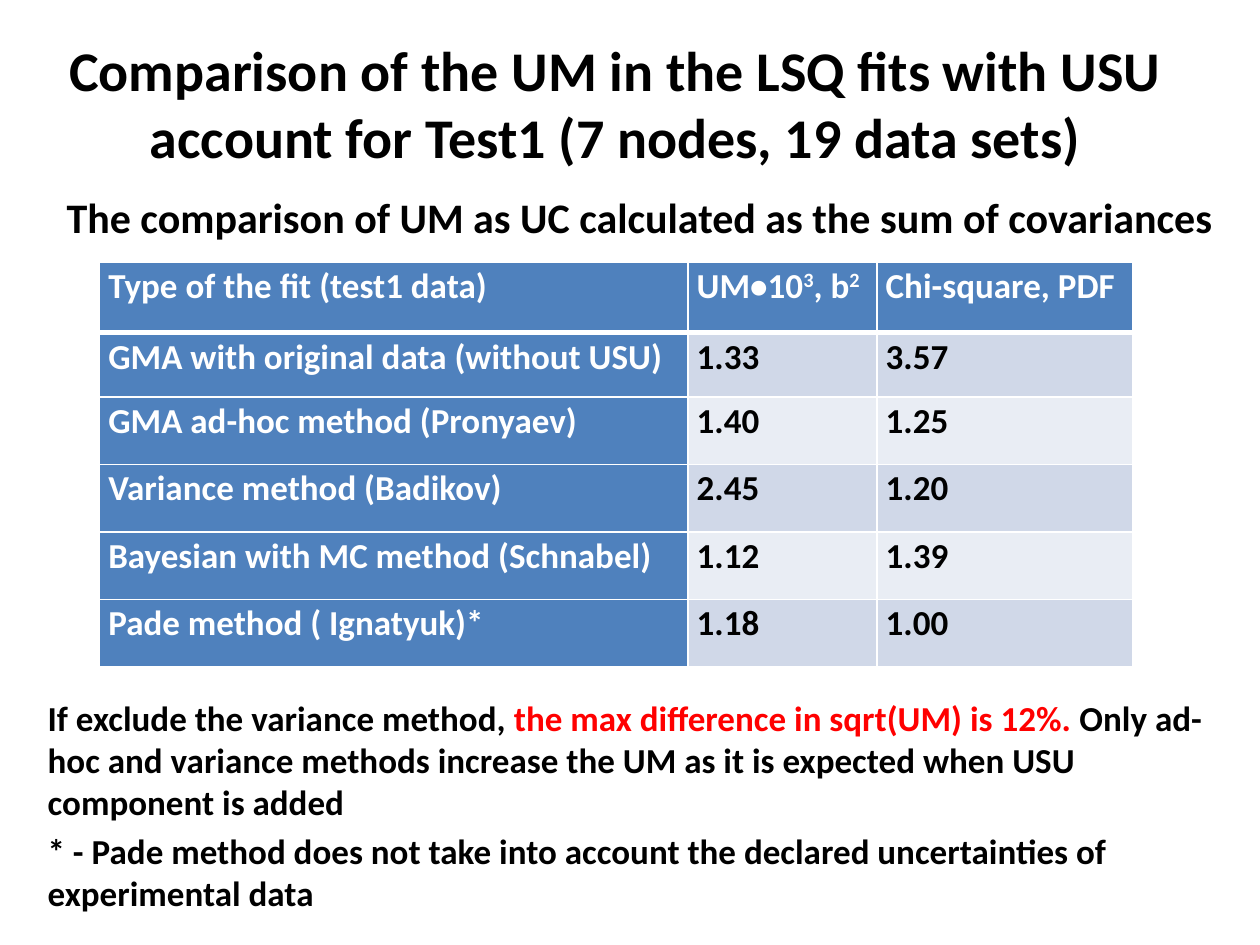
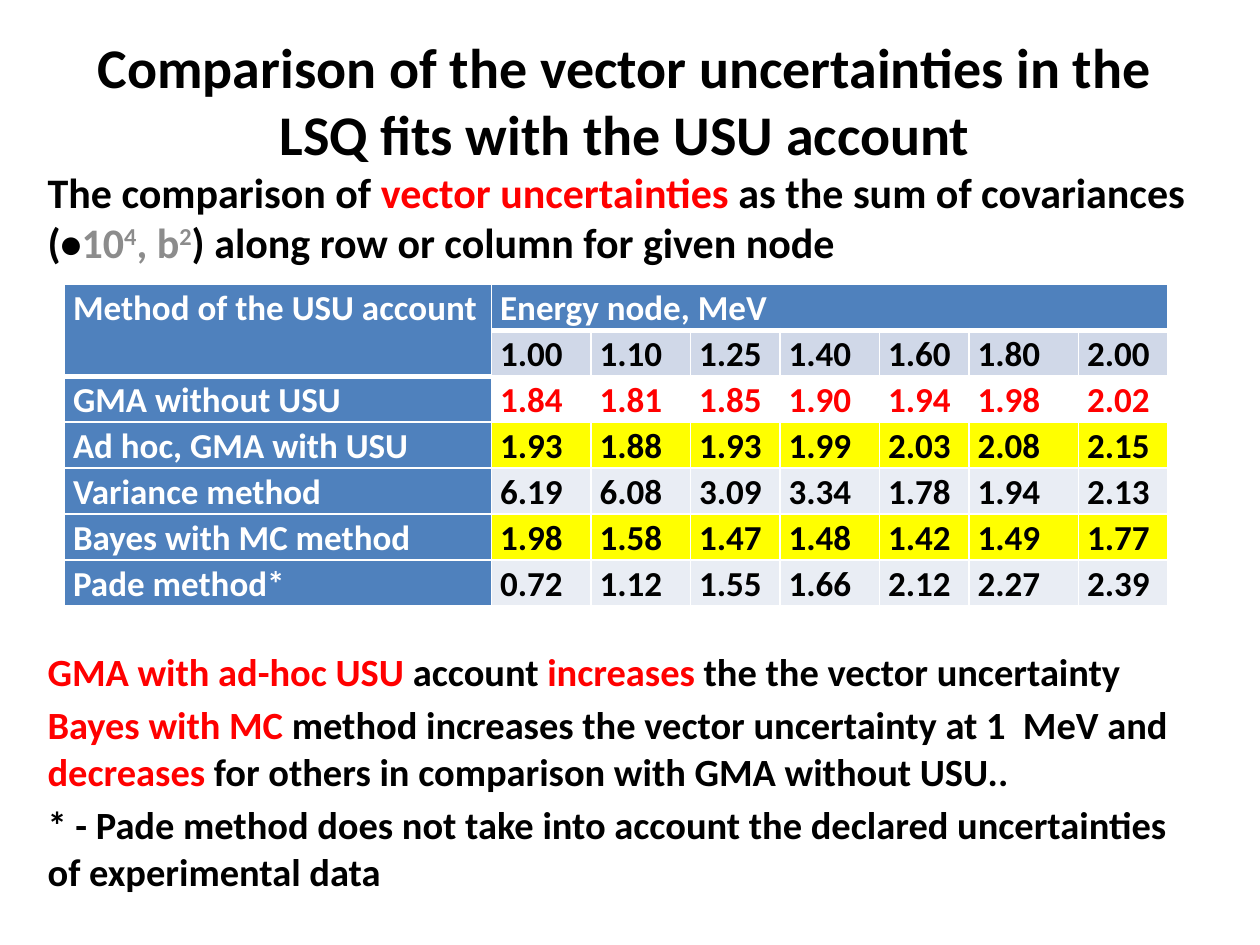
from pptx import Presentation
from pptx.dml.color import RGBColor
from pptx.enum.text import MSO_ANCHOR, MSO_AUTO_SIZE, PP_ALIGN
from pptx.oxml import parse_xml
from pptx.oxml.ns import nsdecls
from pptx.util import Inches, Pt

WIDTH, HEIGHT = 10, 7.5
FONT = "Calibri"
BLACK, WHITE, RED, GREY = "000000", "FFFFFF", "FF0000", "8C8C8C"
BLUE, BAND_DARK, BAND_LIGHT, YELLOW = "4F81BD", "D0D8E8", "E9EDF4", "FFFF00"
TITLE_SIZE, SUBTITLE_SIZE, TABLE_SIZE = 32, 24, 20
SUPERSCRIPT = "30000"
PADE_NOTE = ("* - Pade method does not take into account "
             "the declared uncertainties of experimental data")


def color(hex_string):
    return RGBColor.from_string(hex_string)


def across(percent):
    return Inches(WIDTH * percent / 100)


def down(percent):
    return Inches(HEIGHT * percent / 100)


def box(left, top, width, height):
    return across(left), down(top), across(width), down(height)


def fill_paragraph(paragraph, content, size, base_color=BLACK):
    paragraph.font.name = FONT
    paragraph.font.size = Pt(size)
    paragraph.font.bold = True
    paragraph.font.color.rgb = color(base_color)
    pieces = [content] if isinstance(content, str) else content
    for piece in pieces:
        text, run_color, baseline = piece if isinstance(piece, tuple) else (piece, base_color, None)
        run = paragraph.add_run()
        run.text = text
        run.font.color.rgb = color(run_color)
        if baseline:
            run._r.get_or_add_rPr().set("baseline", baseline)


def red(text):
    return text, RED, None


def raised(text, run_color):
    return text, run_color, SUPERSCRIPT


def fill_frame(frame, paragraphs, size, alignment=PP_ALIGN.LEFT):
    frame.word_wrap = True
    frame.auto_size = MSO_AUTO_SIZE.NONE
    frame.vertical_anchor = MSO_ANCHOR.TOP
    for index, content in enumerate(paragraphs):
        paragraph = frame.add_paragraph() if index else frame.paragraphs[0]
        paragraph.alignment = alignment
        paragraph.space_before = Pt(0.2 * size)
        fill_paragraph(paragraph, content, size)


def add_titled_slide(presentation, title_text, position):
    slide = presentation.slides.add_slide(presentation.slide_layouts[5])
    title = slide.shapes.title
    title.left, title.top, title.width, title.height = position
    fill_frame(title.text_frame, [title_text], TITLE_SIZE, PP_ALIGN.CENTER)
    return slide


def add_text(slide, paragraphs, position, size):
    fill_frame(slide.shapes.add_textbox(*position).text_frame, paragraphs, size)


def set_borders(cell, top, bottom):
    properties = cell._tc.get_or_add_tcPr()
    for side, points in (("L", 1), ("R", 1), ("T", top), ("B", bottom)):
        properties.append(parse_xml(
            f'<a:ln{side} {nsdecls("a")} w="{Pt(points)}"><a:solidFill>'
            f'<a:srgbClr val="{WHITE}"/></a:solidFill></a:ln{side}>'))


def format_cell(cell, content, fill, text_color, top, bottom):
    set_borders(cell, top, bottom)
    cell.fill.solid()
    cell.fill.fore_color.rgb = color(fill)
    cell.margin_left = cell.margin_right = Inches(0.07)
    cell.margin_top = cell.margin_bottom = 0
    paragraph = cell.text_frame.paragraphs[0]
    paragraph.alignment = PP_ALIGN.JUSTIFY
    paragraph.line_spacing = 1.07
    paragraph.space_after = Pt(10)
    fill_paragraph(paragraph, content, TABLE_SIZE, text_color)


def add_data_table(slide, rows, row_styles, left, top, column_widths, row_heights, label_rows=1):
    position = box(left, top, sum(column_widths), sum(row_heights))
    table = slide.shapes.add_table(len(rows), len(column_widths), *position).table
    for column, width in zip(table.columns, column_widths):
        column.width = across(width)
    for row, height in zip(table.rows, row_heights):
        row.height = down(height)

    def is_header(row, column):
        return row == 0 or (column == 0 and row < label_rows)

    for row, (contents, (fill, text_color)) in enumerate(zip(rows, row_styles)):
        for column, content in enumerate(contents):
            labelled = row == 0 or column == 0
            format_cell(table.cell(row, column), content,
                        BLUE if labelled else fill,
                        WHITE if labelled else text_color,
                        top=3 if row and is_header(row - 1, column) else 1,
                        bottom=3 if is_header(row, column) else 1)
    return table


def build_um_slide(presentation):
    slide = add_titled_slide(
        presentation,
        "Comparison of the UM in the LSQ fits with USU account for Test1 (7 nodes, 19 data sets)",
        box(2.8, 3.07, 92.1, 14.67))
    add_text(slide, ["The comparison of UM as UC calculated as the sum of covariances"],
             box(4.3, 19.6, 95.7, 8.4), SUBTITLE_SIZE)
    rows = [
        ["Type of the fit (test1 data)",
         ["UM•10", raised("3", WHITE), ", b", raised("2", WHITE)], "Chi-square, PDF"],
        ["GMA with original data (without USU)", "1.33", "3.57"],
        ["GMA ad-hoc method (Pronyaev)", "1.40", "1.25"],
        ["Variance method (Badikov)", "2.45", "1.20"],
        ["Bayesian with MC method (Schnabel)", "1.12", "1.39"],
        ["Pade method ( Ignatyuk)*", "1.18", "1.00"],
    ]
    bands = [(BAND_DARK if row % 2 else BAND_LIGHT, BLACK) for row in range(len(rows))]
    add_data_table(slide, rows, bands, 7.9, 27.73,
                   [46.7, 15, 20.3], [7.47, 6.8] + [7.15] * 4)
    add_text(slide, [
        ["If exclude the variance method, ", red("the max difference in sqrt(UM) is 12%. "),
         "Only ad-hoc and variance methods increase the UM as it is expected "
         "when USU component is added"],
        PADE_NOTE,
    ], box(2.8, 73.07, 96.5, 25.2), 20)


def build_vector_slide(presentation):
    slide = add_titled_slide(
        presentation,
        "Comparison of the vector uncertainties in the LSQ fits with the USU account",
        box(5.1, 2.8, 89, 14.67))
    add_text(slide, [
        ["The comparison of ", red("vector uncertainties "), "as the sum of covariances (•",
         ("10", GREY, None), raised("4", GREY), (", b", GREY, None), raised("2", GREY),
         ") along row or column for given node"],
    ], box(2.8, 16.93, 95.7, 13.07), SUBTITLE_SIZE)
    add_text(slide, [
        [red("GMA with ad-hoc USU "), "account ", red("increases "),
         "the the vector uncertainty"],
        [red("Bayes with MC "), "method increases the vector uncertainty at 1  MeV and ",
         red("decreases "), "for others in comparison with GMA without USU.."],
        PADE_NOTE,
    ], box(2.8, 67.87, 91.3, 25.2), 22)
    rows = [
        ["Method of the USU account", "Energy node, MeV"] + [""] * 6,
        ["", "1.00", "1.10", "1.25", "1.40", "1.60", "1.80", "2.00"],
        ["GMA without USU", "1.84", "1.81", "1.85", "1.90", "1.94", "1.98", "2.02"],
        ["Ad hoc, GMA with USU", "1.93", "1.88", "1.93", "1.99", "2.03", "2.08", "2.15"],
        ["Variance method", "6.19", "6.08", "3.09", "3.34", "1.78", "1.94", "2.13"],
        ["Bayes with MC method", "1.98", "1.58", "1.47", "1.48", "1.42", "1.49", "1.77"],
        ["Pade method*", "0.72", "1.12", "1.55", "1.66", "2.12", "2.27", "2.39"],
    ]
    plain, highlighted = (BAND_LIGHT, BLACK), (YELLOW, BLACK)
    styles = [(BLUE, WHITE), (BAND_DARK, BLACK), (WHITE, RED),
              highlighted, plain, highlighted, plain]
    table = add_data_table(slide, rows, styles, 5.1, 30.1,
                           [33.9, 7.9, 7.9, 7.1, 7.9, 7.1, 8.7, 7.1],
                           [4.86] * len(rows), label_rows=2)
    table.cell(0, 0).merge(table.cell(1, 0))
    table.cell(0, 1).merge(table.cell(0, 7))


def main():
    presentation = Presentation()
    presentation.slide_width = Inches(WIDTH)
    presentation.slide_height = Inches(HEIGHT)
    build_um_slide(presentation)
    build_vector_slide(presentation)
    presentation.save("out.pptx")


if __name__ == "__main__":
    main()
